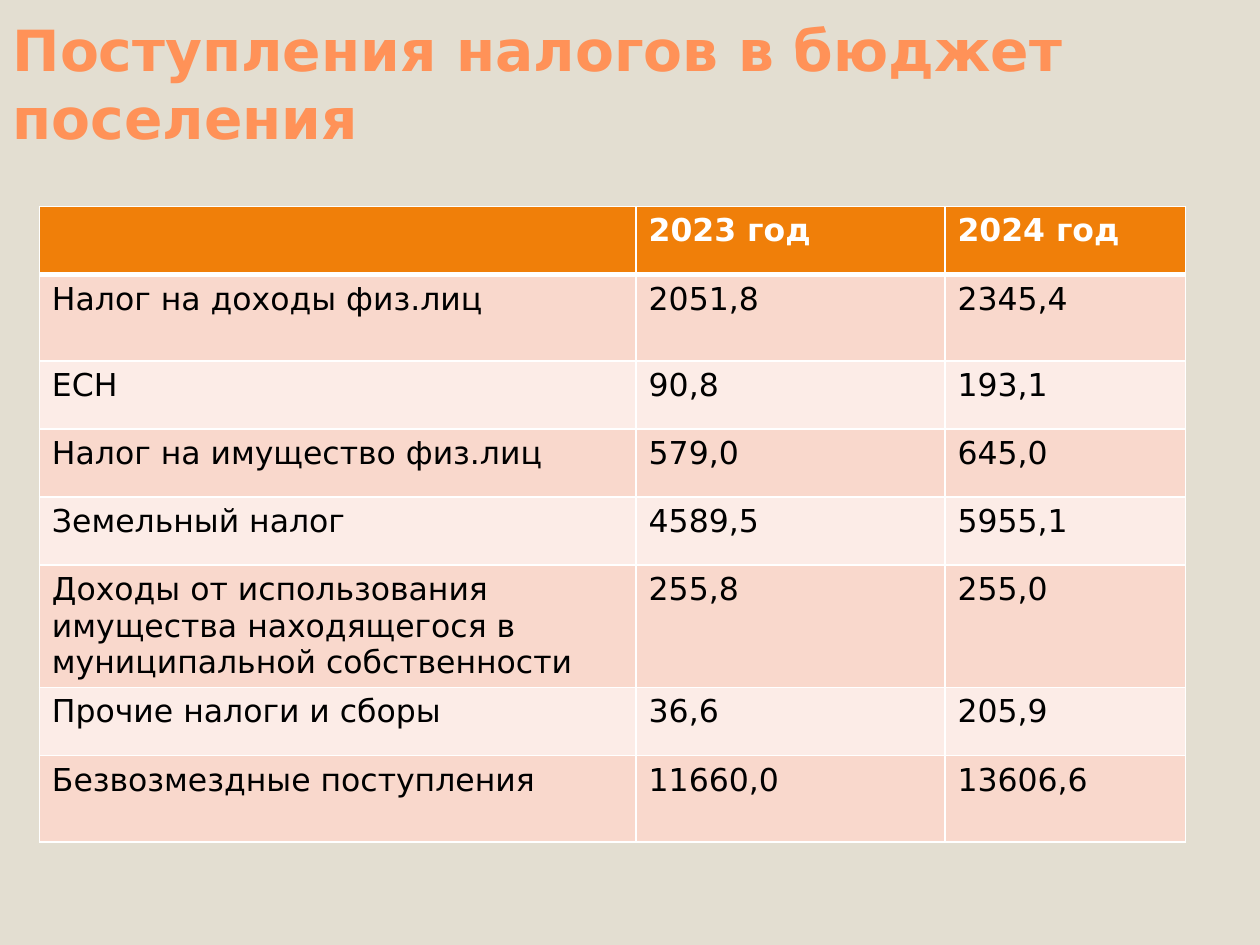
from dataclasses import dataclass

from lxml.etree import SubElement
from pptx import Presentation
from pptx.dml.color import RGBColor as RGB
from pptx.enum.text import MSO_ANCHOR as Anchor, MSO_AUTO_SIZE as AutoSize, PP_ALIGN as Align
from pptx.oxml.ns import qn
from pptx.util import Pt


@dataclass(frozen=True)
class Theme:
    font: str = "DejaVu Sans"
    title_size: float = 32.4
    cell_size: float = 18
    background: str = "E3DED1"
    title: str = "FF9258"
    header: str = "F07F09"
    header_text: str = "FFFFFF"
    bands: tuple = ("F9D8CC", "FCECE7")
    text: str = "000000"
    border: str = "FFFFFF"
    thin: float = 1
    thick: float = 3


THEME = Theme()

TAXES = [
    ("", "2023 год", "2024 год"),
    ("Налог на доходы физ.лиц", "2051,8", "2345,4"),
    ("ЕСН", "90,8", "193,1"),
    ("Налог на имущество физ.лиц", "579,0", "645,0"),
    ("Земельный налог", "4589,5", "5955,1"),
    ("Доходы от использования имущества находящегося в муниципальной собственности",
     "255,8", "255,0"),
    ("Прочие налоги и сборы", "36,6", "205,9"),
    ("Безвозмездные поступления", "11660,0", "13606,6"),
]
COL_WIDTHS = (341, 176.5, 137.5)
ROW_HEIGHT = 38.9
TALL_ROWS = {1: 49.4, 5: 69.6, 7: 49.4}


def format_text(tf, size, color, bold):
    for p in tf.paragraphs:
        for r in p.runs:
            r.font.name = THEME.font
            r.font.size = Pt(size)
            r.font.bold = bold
            r.font.color.rgb = RGB.from_string(color)


def add_title(s, text):
    sp = s.shapes.title
    sp.left, sp.top, sp.width, sp.height = Pt(0), Pt(18), Pt(703.5), Pt(72)
    tf = sp.text_frame
    tf.text = text
    tf.word_wrap = True
    tf.auto_size = AutoSize.NONE
    tf.vertical_anchor = Anchor.BOTTOM
    tf.paragraphs[0].alignment = Align.LEFT
    format_text(tf, THEME.title_size, THEME.title, True)


def set_borders(cell, top, bottom):
    tc_pr = cell._tc.get_or_add_tcPr()
    widths = {"L": THEME.thin, "R": THEME.thin, "T": top, "B": bottom}
    for side, width in widths.items():
        ln = SubElement(tc_pr, qn(f"a:ln{side}"), w=str(Pt(width)))
        SubElement(SubElement(ln, qn("a:solidFill")), qn("a:srgbClr"), val=THEME.border)


def style_cell(cell, row):
    is_header = row == 0
    # The heavy rule runs between the header and the first data row
    set_borders(cell,
                top=THEME.thick if row == 1 else THEME.thin,
                bottom=THEME.thick if is_header else THEME.thin)
    fill = THEME.header if is_header else THEME.bands[(row - 1) % 2]
    cell.fill.solid()
    cell.fill.fore_color.rgb = RGB.from_string(fill)
    color = THEME.header_text if is_header else THEME.text
    format_text(cell.text_frame, THEME.cell_size, color, is_header)


def add_tax_table(s, rows):
    heights = [TALL_ROWS.get(i, ROW_HEIGHT) for i in range(len(rows))]
    table = s.shapes.add_table(len(rows), len(COL_WIDTHS), Pt(22.5), Pt(118),
                               Pt(sum(COL_WIDTHS)), Pt(sum(heights))).table
    for column, width in zip(table.columns, COL_WIDTHS):
        column.width = Pt(width)
    for i, (values, height) in enumerate(zip(rows, heights)):
        table.rows[i].height = Pt(height)
        for j, value in enumerate(values):
            cell = table.cell(i, j)
            cell.text = value
            style_cell(cell, i)


def main():
    prs = Presentation()
    prs.slide_width, prs.slide_height = Pt(720), Pt(540)
    s = prs.slides.add_slide(prs.slide_layouts[5])

    # Background
    s.background.fill.solid()
    s.background.fill.fore_color.rgb = RGB.from_string(THEME.background)

    # Title and table
    add_title(s, "Поступления налогов в бюджет поселения")
    add_tax_table(s, TAXES)

    prs.save("out.pptx")


if __name__ == "__main__":
    main()
